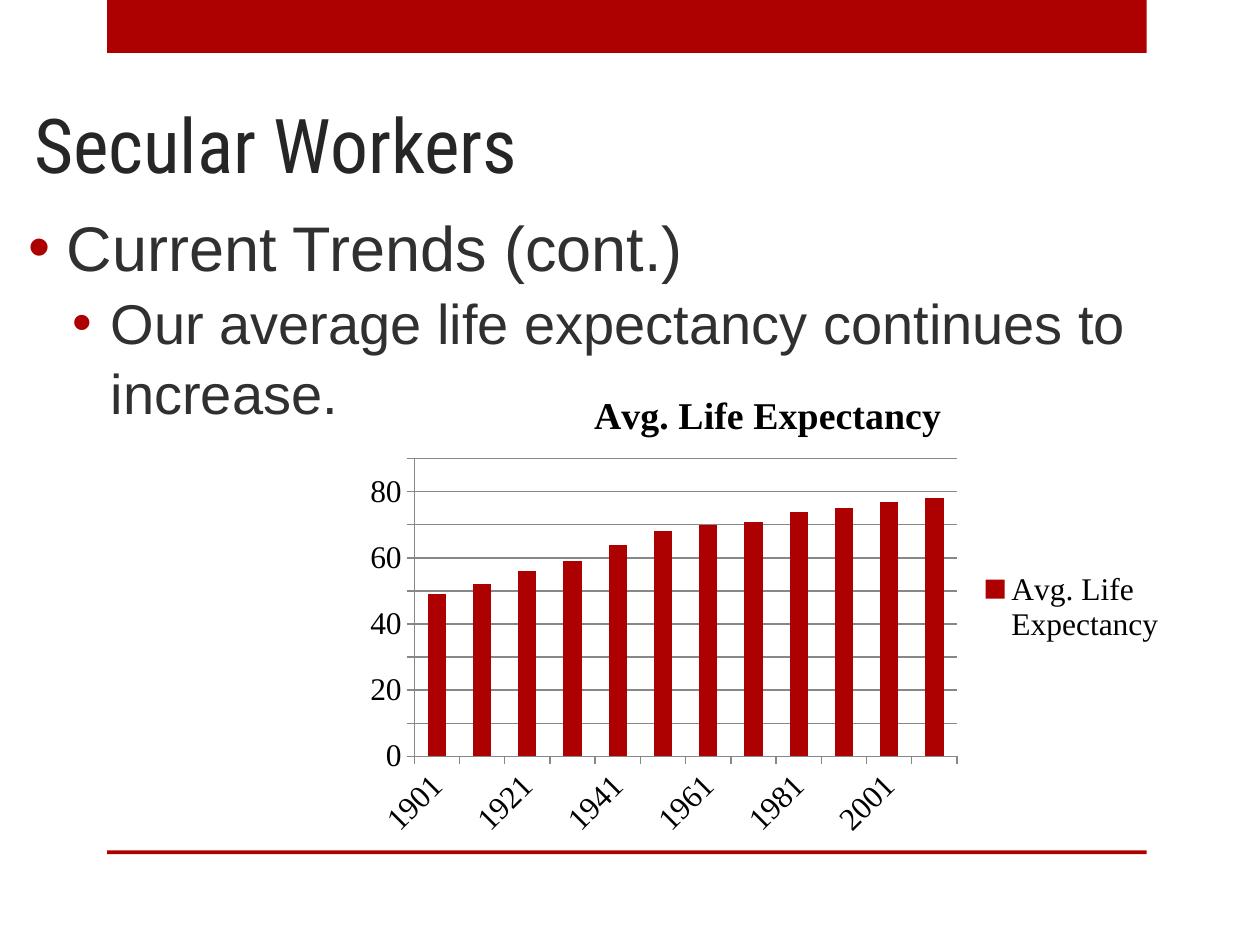
"""Build a slide on rising life expectancy with a bulleted text and a column chart."""
from dataclasses import dataclass

import pptx
import pptx.chart.data
import pptx.dml.color
import pptx.enum.chart
import pptx.enum.shapes
import pptx.enum.text
import pptx.oxml
import pptx.oxml.ns
import pptx.util

TITLE = "Secular Workers"
BULLETS = [
    dict(text="Current Trends (cont.)", level=0, indent=0.3, size=36, before=2),
    dict(text="Our average life expectancy continues to increase.",
         level=1, indent=0.65, size=32, before=1),
]
SERIES = "Avg. Life Expectancy"
YEARS = [str(year) for year in range(1901, 2012, 10)]
AGES = [49, 52, 56, 59, 64, 68, 70, 71, 74, 75, 77, 78]

WIDTH, HEIGHT = 10, 7.5
BARS = [(0.085, 0, 0.825, 0.056), (0.085, 0.9, 0.825, 0.004)]
TITLE_BOX = (0.017, 0.089, 0.891, 0.117)
BODY_BOX = (0.013, 0.211, 0.928, 0.689)
CHART_BOX = (0.283, 0.389, 0.653, 0.508)
PLOT_SHARES = dict(x=0.07, y=0.19, w=0.66, h=0.62)
HANGING = 0.3


@dataclass(frozen=True)
class Theme:
    red: str = "AD0101"
    title: str = "262626"
    body: str = "303030"
    grid: str = "878787"
    black: str = "000000"
    title_font: str = "Roboto Condensed"
    body_font: str = "Arial"
    chart_font: str = "Times New Roman"
    title_size: float = 43.2
    chart_title_size: float = 21.6
    chart_size: float = 18


THEME = Theme()


def rgb(color):
    return pptx.dml.color.RGBColor.from_string(color)


def place(box):
    """Turn shares of the slide into left, top, width and height."""
    return [pptx.util.Inches(share * side)
            for share, side in zip(box, (WIDTH, HEIGHT) * 2)]


def style(font, name, size, color, bold=False):
    font.name, font.size, font.bold = name, pptx.util.Pt(size), bold
    font.color.rgb = rgb(color)


def add_bars(s):
    for box in BARS:
        sp = s.shapes.add_shape(pptx.enum.shapes.MSO_SHAPE.RECTANGLE, *place(box))
        sp.shadow.inherit = False
        sp.fill.solid()
        sp.fill.fore_color.rgb = rgb(THEME.red)
        sp.line.fill.background()


def add_title(s):
    sp = s.shapes.title
    sp.left, sp.top, sp.width, sp.height = place(TITLE_BOX)
    tf = sp.text_frame
    tf.vertical_anchor = pptx.enum.text.MSO_ANCHOR.BOTTOM
    p = tf.paragraphs[0]
    p.alignment = pptx.enum.text.PP_ALIGN.LEFT
    r = p.add_run()
    r.text = TITLE
    style(r.font, THEME.title_font, THEME.title_size, THEME.title)


def add_bullet_mark(p, indent):
    pPr = p._p.get_or_add_pPr()
    pPr.set("marL", str(pptx.util.Inches(indent)))
    pPr.set("indent", str(-pptx.util.Inches(HANGING)))
    ns = pptx.oxml.ns.nsdecls("a")
    for xml in (f'<a:buClr {ns}><a:srgbClr val="{THEME.red}"/></a:buClr>',
                f'<a:buFont {ns} typeface="{THEME.body_font}"/>',
                f'<a:buChar {ns} char="•"/>'):
        pPr.append(pptx.oxml.parse_xml(xml))


def add_body(s):
    tf = s.shapes.add_textbox(*place(BODY_BOX)).text_frame
    tf.word_wrap = True
    for i, item in enumerate(BULLETS):
        p = tf.add_paragraph() if i else tf.paragraphs[0]
        p.level = item["level"]
        p.line_spacing = 1.04
        p.space_before = pptx.util.Pt(item["before"])
        add_bullet_mark(p, item["indent"])
        r = p.add_run()
        r.text = item["text"]
        style(r.font, THEME.body_font, item["size"], THEME.body)


def set_plot_area(chart):
    """Fix the inner plot area as shares of the chart."""
    parts = "".join(f'<c:{key}Mode val="edge"/>' for key in "xy")
    parts += "".join(f'<c:{key} val="{val}"/>' for key, val in PLOT_SHARES.items())
    area = chart._chartSpace.chart.plotArea
    for old in area.findall(pptx.oxml.ns.qn("c:layout")):
        area.remove(old)
    area.insert(0, pptx.oxml.parse_xml(
        f'<c:layout {pptx.oxml.ns.nsdecls("c")}><c:manualLayout>'
        f'<c:layoutTarget val="inner"/>{parts}</c:manualLayout></c:layout>'))


def add_chart(s):
    data = pptx.chart.data.CategoryChartData()
    data.categories = YEARS
    data.add_series(SERIES, AGES)
    enums = pptx.enum.chart
    chart = s.shapes.add_chart(enums.XL_CHART_TYPE.COLUMN_STACKED,
                               *place(CHART_BOX), data).chart
    style(chart.font, THEME.chart_font, THEME.chart_size, THEME.black)
    chart.has_title = True
    r = chart.chart_title.text_frame.paragraphs[0].add_run()
    r.text = SERIES
    style(r.font, THEME.chart_font, THEME.chart_title_size, THEME.black, bold=True)
    chart.has_legend = True
    chart.legend.position = enums.XL_LEGEND_POSITION.RIGHT
    chart.legend.include_in_layout = False

    plot = chart.plots[0]
    plot.gap_width, plot.overlap, plot.vary_by_categories = 150, 100, False
    fill = plot.series[0].format.fill
    fill.solid()
    fill.fore_color.rgb = rgb(THEME.red)

    ages, years = chart.value_axis, chart.category_axis
    ages.minimum_scale, ages.maximum_scale, ages.major_unit = 0, 90, 10
    ages.has_major_gridlines = True
    for line in (ages.format.line, years.format.line, ages.major_gridlines.format.line):
        line.color.rgb = rgb(THEME.grid)
        line.width = pptx.util.Pt(0.75)
    for axis in (ages, years):
        axis.major_tick_mark = enums.XL_TICK_MARK.OUTSIDE
    years.tick_labels.font.size = pptx.util.Pt(THEME.chart_size)
    years._element.txPr.bodyPr.set("rot", str(-45 * 60000))
    set_plot_area(chart)


def main():
    prs = pptx.Presentation()
    prs.slide_width = pptx.util.Inches(WIDTH)
    prs.slide_height = pptx.util.Inches(HEIGHT)
    s = prs.slides.add_slide(prs.slide_layouts[5])
    add_bars(s)
    add_title(s)
    add_body(s)
    add_chart(s)
    prs.save("out.pptx")


if __name__ == "__main__":
    main()
